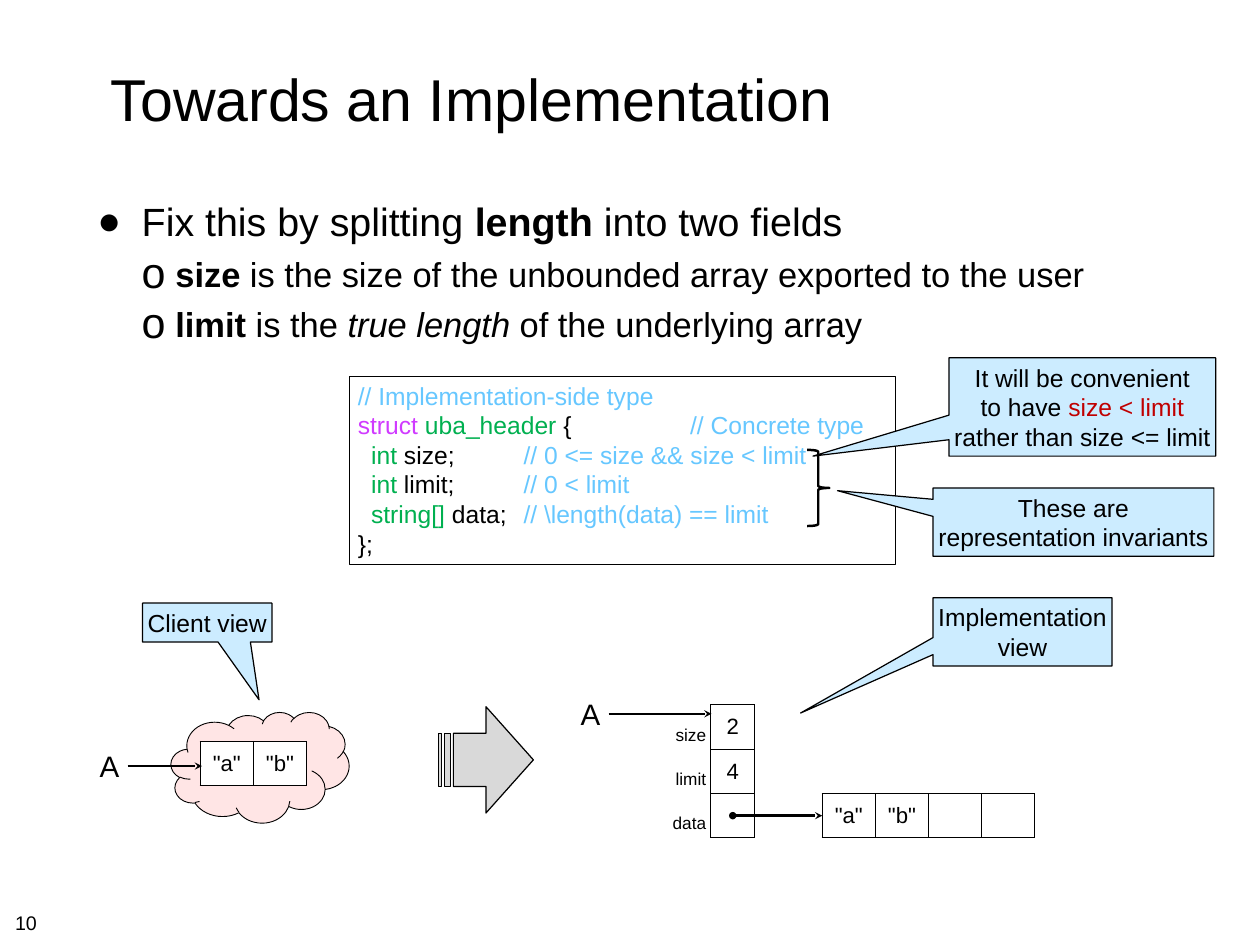
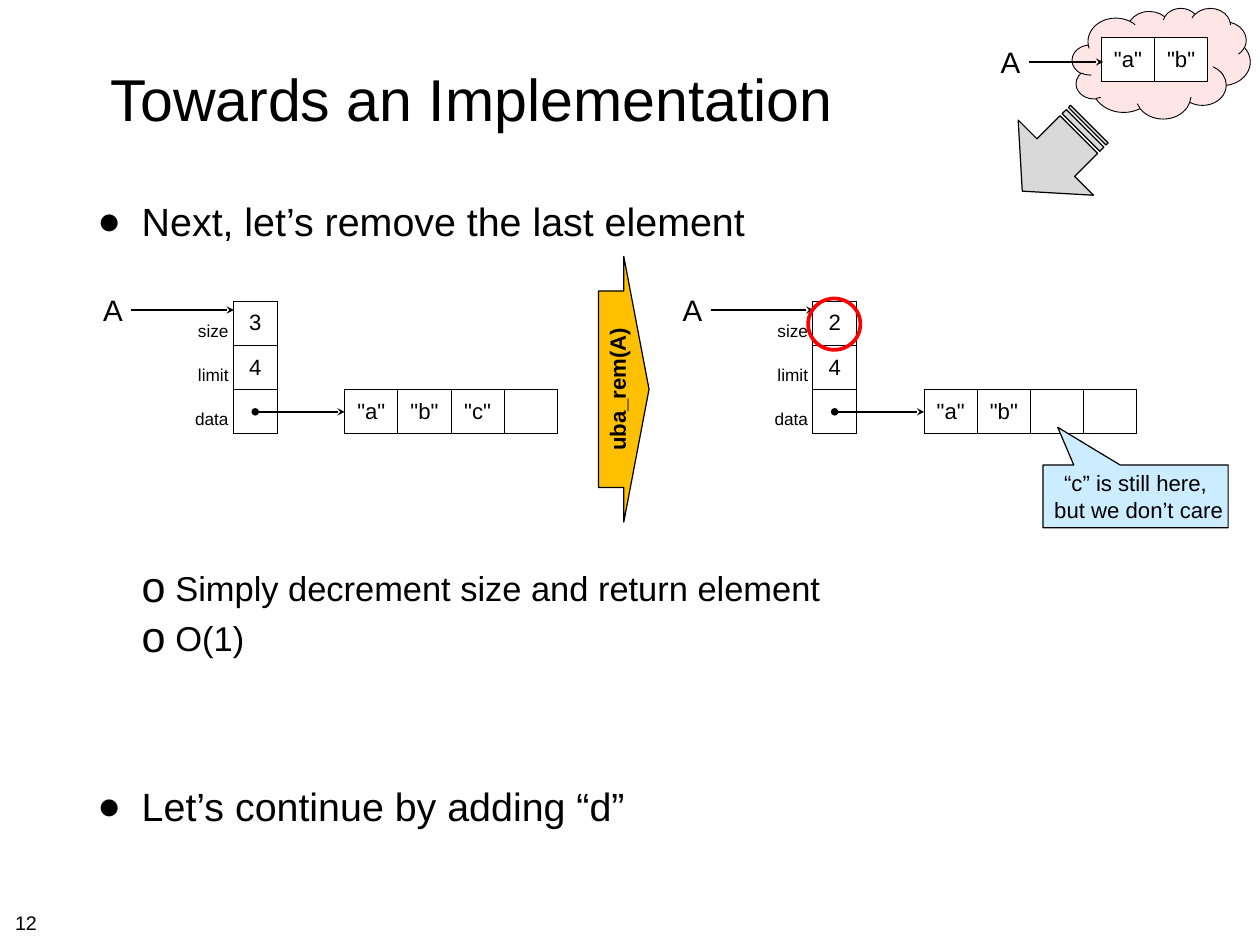
from lxml import etree
from pptx import Presentation
from pptx.dml.color import RGBColor
from pptx.enum.shapes import MSO_CONNECTOR, MSO_SHAPE
from pptx.enum.text import MSO_ANCHOR, MSO_AUTO_SIZE, PP_ALIGN
from pptx.oxml.ns import qn
from pptx.util import Pt

PX = 9144
LEFT, MID, RIGHT = PP_ALIGN.LEFT, PP_ALIGN.CENTER, PP_ALIGN.RIGHT
TOP, CORE, LOW = MSO_ANCHOR.TOP, MSO_ANCHOR.MIDDLE, MSO_ANCHOR.BOTTOM
RECT, CLOUD, RING = MSO_SHAPE.RECTANGLE, MSO_SHAPE.CLOUD, MSO_SHAPE.OVAL
CALL, BRACE = MSO_SHAPE.RECTANGULAR_CALLOUT, MSO_SHAPE.RIGHT_BRACE
STRIPE, DOWN = MSO_SHAPE.STRIPED_RIGHT_ARROW, MSO_SHAPE.DOWN_ARROW
STRAIGHT, FIXED = MSO_CONNECTOR.STRAIGHT, MSO_AUTO_SIZE.NONE
FONT = "Arial"
PLAIN = "{2D5ABB26-0587-4C30-8999-92F81FD0307C}"
COL = {
    "black": "000000", "white": "FFFFFF", "note": "CCECFF", "cloud": "FFE5E5",
    "gray": "D9D9D9", "gold": "FFC000", "red": "FF0000", "dark": "C00000",
    "rem": "66C7FF", "key": "D03BFF", "type": "00B050",
}
RGB = {name: RGBColor.from_string(code) for name, code in COL.items()}
BOLD, ITAL = {"bold": True}, {"italic": True}
LEVELS = [
    {"size": 32, "gap": 8, "left": 50, "hang": -50, "mark": "●", "scale": 100},
    {"size": 28, "gap": 7, "left": 88, "hang": -38, "mark": "o", "scale": 125},
]


def write(frame, paras, size, align=MID, anchor=CORE, pads=(5, 5, 5, 5), wrap=False):
    sides = ("margin_left", "margin_top", "margin_right", "margin_bottom")
    form = {"word_wrap": wrap, "auto_size": FIXED, "vertical_anchor": anchor}
    form.update({side: pad * PX for side, pad in zip(sides, pads)})
    for name, value in form.items():
        setattr(frame, name, value)
    for i, runs in enumerate(paras):
        para = frame.add_paragraph() if i else frame.paragraphs[0]
        para.alignment = align
        for text, style in runs:
            run = para.add_run()
            run.text = text
            font = {"name": FONT, "size": Pt(size), "bold": False, **style}
            run.font.color.rgb = RGB[font.pop("hue", "black")]
            for name, value in font.items():
                setattr(run.font, name, value)


def draw(slide, kind, box, fill=None, edge="black", width=1, turn=0, adj=()):
    shape = slide.shapes.add_shape(kind, *[n * PX for n in box])
    shape.shadow.inherit = False
    shape.rotation = turn
    for i, value in enumerate(adj):
        shape.adjustments[i] = value
    if fill:
        shape.fill.solid()
        shape.fill.fore_color.rgb = RGB[fill]
    else:
        shape.fill.background()
    shape.line.color.rgb = RGB[edge]
    shape.line.width = Pt(width)
    return shape


rem, key, kind = {"hue": "rem"}, {"hue": "key"}, {"hue": "type"}
code = [
    [("// Implementation-side type", rem)],
    [("struct ", key), ("uba_header", kind), (" {\t", {}), ("// Concrete type", rem)],
    [("\tint", kind), (" size;\t", {}), ("// 0 <= size && size < limit", rem)],
    [("\tint", kind), (" limit;\t", {}), ("// 0 < limit", rem)],
    [("\tstring[]", kind), (" data;\t", {}), ("// \\length(data) == limit", rem)],
    [("};", {})],
]
pages = [
    {
        "no": "10",
        "body": [
            (0, 0, [("Fix this by splitting ", {}), ("length", BOLD), (" into two fields", {})]),
            (1, 0, [("size", BOLD),
                    (" is the size of the unbounded array exported to the user", {})]),
            (1, 0, [("limit", BOLD), (" is the ", {}), ("true length", ITAL),
                    (" of the underlying array", {})]),
        ],
        "client": (226, 837),
        "stripe": (495, 798, 0),
        "heads": [(732, 796, "2", ['"a"', '"b"', "", ""])],
        "notes": [
            ((161, 681, 146, 44), (0.4, 1.98), 20, [[("Client view", {})]]),
            ((1053, 675, 202, 77), (-1.24, 1.19), 20,
             [[("Implementation", {})], [("view", {})]]),
            ((1071, 404, 301, 111), (-1.01, 0.5), 20,
             [[("It will be convenient", {})],
              [("to have ", {}), ("size < limit", {"hue": "dark"})],
              [("rather than size <= limit", {})]]),
            ((1053, 551, 317, 77), (-0.84, -0.46), 20,
             [[("These are", {})], [("representation invariants", {})]]),
        ],
    },
    {
        "no": "12",
        "body": [
            (0, 0, [("Next, let’s remove the last element", {})]),
            (1, 255, [("Simply decrement size and return element", {})]),
            (1, 0, [("O(1)", {})]),
            (0, 93, [("Let’s continue by adding “d”", {})]),
        ],
        "client": (1243, 42),
        "stripe": (1138, 118, 135),
        "heads": [(193, 340, "3", ['"a"', '"b"', '"c"', ""]),
                  (847, 340, "2", ['"a"', '"b"', "", ""])],
        "notes": [
            ((1177, 525, 209, 71), (-0.42, -1.1), 18,
             [[("“c” is still here,", {})], [(" but we don’t care", {})]]),
        ],
    },
]

deck = Presentation()
deck.slide_width, deck.slide_height = 1422 * PX, 1067 * PX
for page in pages:
    slide = deck.slides.add_slide(deck.slide_layouts[5])
    title = slide.shapes.title
    place = {"left": 104, "top": 28, "width": 857, "height": 164}
    for name, value in place.items():
        setattr(title, name, value * PX)
    write(title.text_frame, [[("Towards an Implementation", {})]], 48,
          pads=(6, 6, 6, 6), wrap=True)

    body = slide.shapes.add_textbox(104 * PX, 217 * PX, 1214 * PX, 754 * PX).text_frame
    paras = [
        [(text, {"size": Pt(LEVELS[rank]["size"]), **style}) for text, style in runs]
        for rank, _, runs in page["body"]
    ]
    write(body, paras, 32, LEFT, TOP, (6, 6, 6, 6), True)
    for para, (rank, extra, _) in zip(body.paragraphs, page["body"]):
        level = LEVELS[rank]
        para.space_before = Pt(level["gap"] + extra)
        prop = para._p.get_or_add_pPr()
        prop.set("marL", str(level["left"] * PX))
        prop.set("indent", str(level["hang"] * PX))
        etree.SubElement(prop, qn("a:buSzPct"), val=str(level["scale"] * 1000))
        etree.SubElement(prop, qn("a:buFont"), typeface=FONT)
        etree.SubElement(prop, qn("a:buChar"), char=level["mark"])

    x, y = page["client"]
    draw(slide, CLOUD, (x - 33, y - 33, 201, 125), "cloud", width=0.75)
    left, top, turn = page["stripe"]
    draw(slide, STRIPE, (left, top, 107, 120), "gray", turn=turn)
    grids = [(x, y, [60, 60], [['"a"', '"b"']])]
    lines = [(x - 82, x + 2, y + 28, "none")]
    marks = [(x - 124, y + 3, 43, 50, "A", 24, MID, 5)]
    for x, y, count, items in page["heads"]:
        grids += [
            (x, y, [70, 50], [["size", count], ["limit", "4"], ["data", ""]]),
            (x + 196, y + 100, [60] * 4, [items]),
        ]
        lines += [(x + 95, x + 196, y + 125, "oval"), (x - 45, x + 71, y + 10, "none")]
        marks.append((x - 87, y - 15, 43, 50, "A", 24, MID, 5))
    marks.append((11, 1023, 37, 35, page["no"], 16, LEFT, 6))

    for x, y, widths, rows in grids:
        size = (len(rows), len(widths))
        frame = slide.shapes.add_table(*size, x * PX, y * PX, sum(widths) * PX, 50 * size[0] * PX)
        for node in frame.element.iter(qn("a:tableStyleId")):
            node.text = PLAIN
        table = frame.table
        for col, width in zip(table.columns, widths):
            col.width = width * PX
        for r, row in enumerate(rows):
            table.rows[r].height = 50 * PX
            for c, text in enumerate(row):
                cell = table.cell(r, c)
                label = text in ("size", "limit", "data")
                if size[0] == 1:
                    cell.fill.solid()
                    cell.fill.fore_color.rgb = RGB["white"]
                else:
                    cell.fill.background()
                cell.vertical_anchor = LOW if label else CORE
                cell.margin_left = cell.margin_right = (5 if label else 10) * PX
                para = cell.text_frame.paragraphs[0]
                para.alignment = RIGHT if label else MID
                if text:
                    run = para.add_run()
                    run.text = text
                    run.font.name, run.font.size = FONT, Pt(14 if label else 18)
                    run.font.color.rgb = RGB["black"]
                prop = cell._tc.get_or_add_tcPr()
                for i, side in enumerate("R" if label else "LRTB"):
                    edge = etree.Element(qn("a:ln" + side), w="12700")
                    fill = etree.SubElement(edge, qn("a:solidFill"))
                    etree.SubElement(fill, qn("a:srgbClr"), val=COL["black"])
                    prop.insert(i, edge)

    for start, end, y, head in lines:
        line = slide.shapes.add_connector(STRAIGHT, start * PX, y * PX, end * PX, y * PX)
        line.line.color.rgb = RGB["black"]
        line.line.width = Pt(2)
        edge = line.element.spPr.find(qn("a:ln"))
        etree.SubElement(edge, qn("a:headEnd"), type=head)
        etree.SubElement(edge, qn("a:tailEnd"), type="stealth")
        etree.SubElement(line.element.spPr, qn("a:effectLst"))

    for x, y, w, h, text, size, align, pad in marks:
        box = slide.shapes.add_textbox(x * PX, y * PX, w * PX, h * PX)
        write(box.text_frame, [[(text, {})]], size, align, TOP, [pad] * 4)

    if page["no"] == "10":
        box = draw(slide, RECT, (394, 425, 617, 212), width=0.75)
        write(box.text_frame, code, 20, LEFT, TOP, (10, 5, 10, 5), True)
        for i, para in enumerate(box.text_frame.paragraphs):
            tabs = etree.SubElement(para._p.get_or_add_pPr(), qn("a:tabLst"))
            for stop in [375] if i < 2 else [15, 187]:
                etree.SubElement(tabs, qn("a:tab"), pos=str(stop * PX), algn="l")
    else:
        draw(slide, RING, (912, 337, 59, 58), edge="red", width=3)
        arrow = draw(slide, DOWN, (554, 411, 300, 57), "gold", turn=270, adj=(0.74, 0.5))
        write(arrow.text_frame, [[("uba_rem(A)", BOLD)]], 18, pads=(6, 6, 6, 0), wrap=True)

    for box, adj, size, paras in page["notes"]:
        note = draw(slide, CALL, box, "note", adj=adj)
        write(note.text_frame, paras, size)
    if page["no"] == "10":
        draw(slide, BRACE, (911, 508, 25, 86), width=2)

deck.save("out.pptx")
